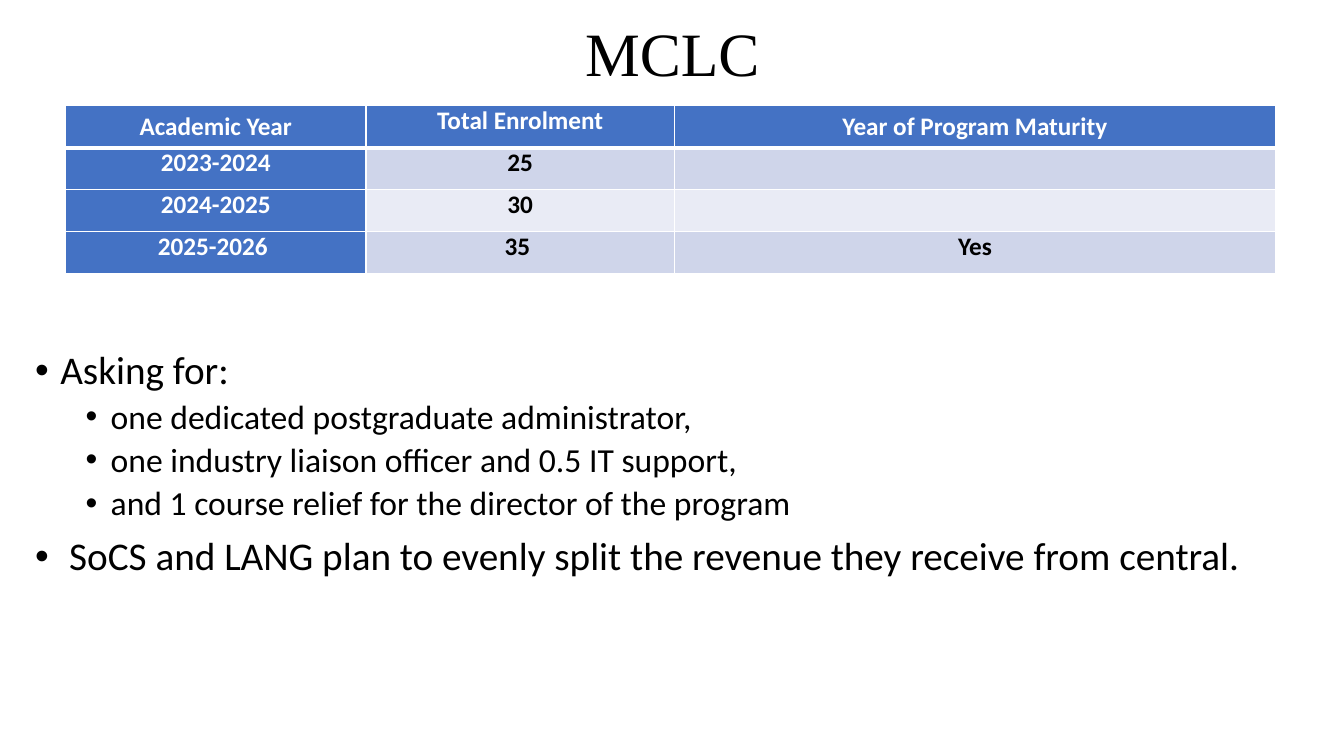
import pptx
import pptx.util
import pptx.dml.color
import pptx.enum.text
import pptx.oxml.ns
import lxml.etree

Inches = pptx.util.Inches
Pt = pptx.util.Pt
ALIGN = pptx.enum.text.PP_ALIGN
ANCHOR = pptx.enum.text.MSO_ANCHOR

BLUE, BLACK, WHITE = "4472C4", "000000", "FFFFFF"
BANDS = ["CFD5EA", "E9EBF5"]

HEADS = ["Academic Year", "Total Enrolment", "Year of Program Maturity"]
YEARS = [
    ["2023-2024", "25", ""],
    ["2024-2025", "30", ""],
    ["2025-2026 ", "35 ", "Yes"],
]
WIDTHS = [2.98, 3.06, 5.96]
POINTS = [
    (0, "Asking for:"),
    (1, "one dedicated postgraduate administrator,"),
    (1, "one industry liaison officer and 0.5 IT support,"),
    (1, "and 1 course relief for the director of the program"),
    (0, " SoCS and LANG plan to evenly split the revenue they receive from central."),
]


def color(code):
    return pptx.dml.color.RGBColor.from_string(code)


def add(parent, tag, **attrs):
    """Append a DrawingML child element."""
    node = lxml.etree.SubElement(parent, pptx.oxml.ns.qn("a:" + tag))
    for key, value in attrs.items():
        node.set(key, str(value))
    return node


def write(para, text, size=18, font="Calibri", tint=BLACK, bold=False,
          align=ALIGN.LEFT, space=1.0, before=0):
    para.alignment = align
    para.line_spacing = space
    para.space_before = Pt(before)
    run = para.add_run()
    run.text = text
    run.font.size = Pt(size)
    run.font.name = font
    run.font.bold = bold
    run.font.color.rgb = color(tint)


class Page:
    def __init__(self, deck):
        self.slide = deck.slides.add_slide(deck.slide_layouts[6])

    def frame(self, left, top, width, height, anchor=ANCHOR.TOP):
        box = self.slide.shapes.add_textbox(
            Inches(left), Inches(top), Inches(width), Inches(height))
        box.text_frame.word_wrap = True
        box.text_frame.vertical_anchor = anchor
        return box.text_frame

    def title(self, text, *place):
        frame = self.frame(*place, anchor=ANCHOR.MIDDLE)
        write(frame.paragraphs[0], text, size=44, font="Times New Roman",
              align=ALIGN.CENTER, space=0.9)

    def list(self, items, *place):
        frame = self.frame(*place)
        for i, (level, text) in enumerate(items):
            para = frame.add_paragraph() if i else frame.paragraphs[0]
            para.level = level
            write(para, text, size=28 - 4 * level, space=0.9,
                  before=10 - 5 * level)
            props = para._p.get_or_add_pPr()
            props.set("marL", str(Inches(0.25 + 0.5 * level)))
            props.set("indent", str(Inches(-0.25)))
            add(props, "buFont", typeface="Arial")
            add(props, "buChar", char="•")

    def edge(self, cell, **widths):
        """Draw white cell borders; L, R, T and B give widths in points."""
        props = cell._tc.get_or_add_tcPr()
        for side, width in widths.items():
            line = add(props, "ln" + side, w=Pt(width))
            add(add(line, "solidFill"), "srgbClr", val=WHITE)

    def table(self, rows, widths, left, top, height):
        grid = self.slide.shapes.add_table(
            len(rows), len(widths), Inches(left), Inches(top),
            Inches(sum(widths)), Inches(height)).table
        for col, width in zip(grid.columns, widths):
            col.width = Inches(width)
        for r, row in enumerate(rows):
            for c, text in enumerate(row):
                cell = grid.cell(r, c)
                head = r == 0 or c == 0
                self.edge(cell, L=1, R=1, T=3 if r == 1 else 1,
                          B=3 if r == 0 else 1)
                cell.fill.solid()
                cell.fill.fore_color.rgb = color(
                    BLUE if head else BANDS[(r - 1) % 2])
                if not text:
                    continue
                cell.margin_left = cell.margin_right = Inches(0.07)
                cell.margin_top = cell.margin_bottom = 0
                if r == 0 and c != 1:
                    cell.vertical_anchor = ANCHOR.MIDDLE
                write(cell.text_frame.paragraphs[0], text, bold=True,
                      tint=WHITE if head else BLACK, align=ALIGN.CENTER)


def main():
    deck = pptx.Presentation()
    deck.slide_width = Inches(13.33)
    deck.slide_height = Inches(7.5)
    page = Page(deck)
    page.title("MCLC", 0.92, -0.16, 11.5, 1.45)
    page.list(POINTS, 0.25, 3.43, 12.83, 3.56)
    page.table([HEADS] + YEARS, WIDTHS, 0.65, 1.05, 1.66)
    deck.save("out.pptx")


if __name__ == "__main__":
    main()
